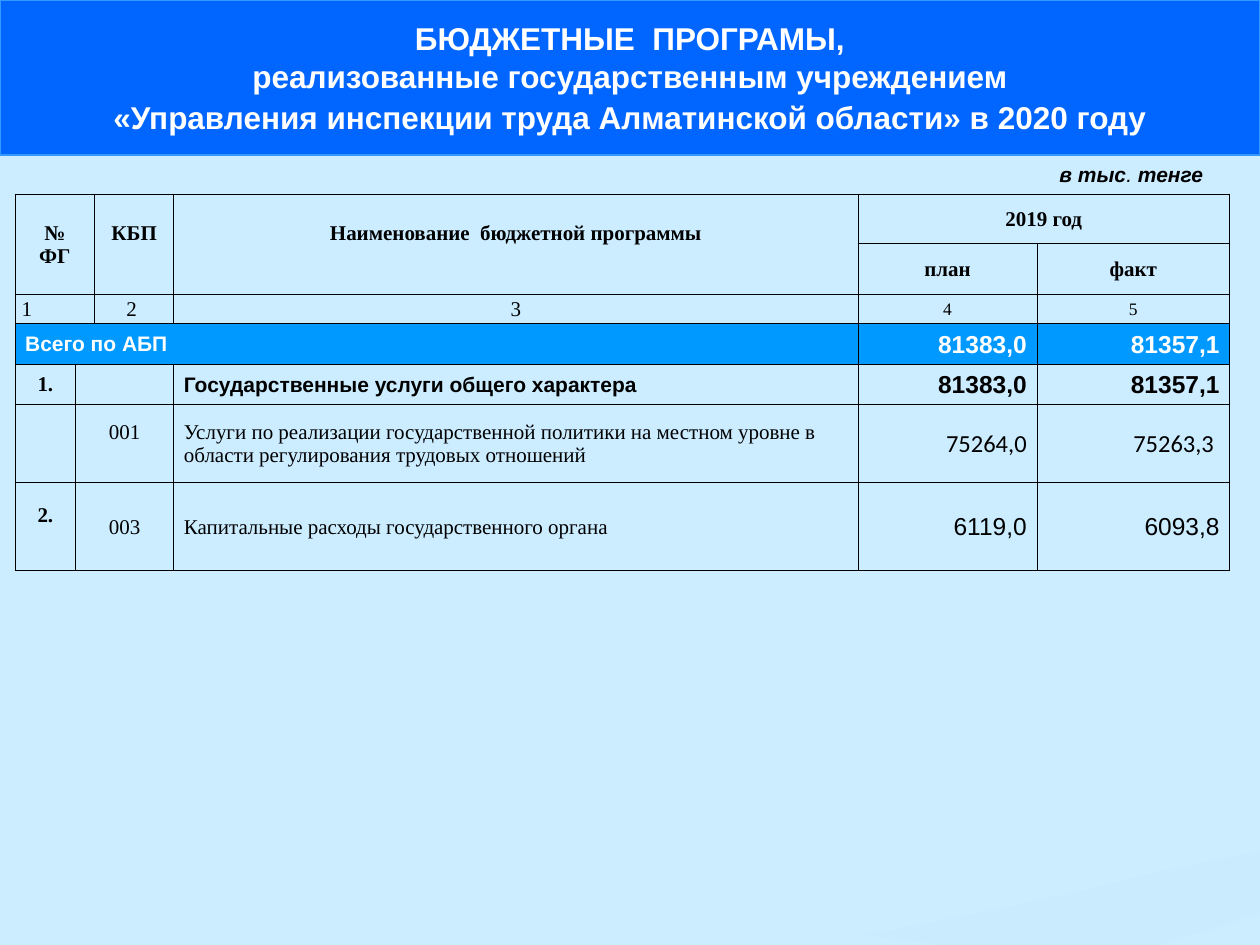
from lxml import etree
from pptx import Presentation, util as u
from pptx.dml.color import RGBColor
from pptx.enum import shapes, text
from pptx.oxml import ns

SKY = RGBColor(0xCC, 0xEC, 0xFF)
SWOOSH = RGBColor(0xC6, 0xE7, 0xFC)
BAND = RGBColor(0x00, 0x66, 0xFF)
EDGE = RGBColor(0x33, 0x99, 0xFF)
TOTAL = RGBColor(0x00, 0x99, 0xFF)
WHITE = RGBColor(0xFF, 0xFF, 0xFF)
BLACK = RGBColor(0, 0, 0)

L, C, R = text.PP_ALIGN.LEFT, text.PP_ALIGN.CENTER, text.PP_ALIGN.RIGHT
MIDDLE = text.MSO_ANCHOR.MIDDLE

HEAD = dict(name="Times New Roman", size=12, bold=True, color=BLACK)
BODY = dict(HEAD, bold=False)
SMALL = dict(BODY, size=10)
GROUP = dict(HEAD, name="Arial")
GROUP_SUM = dict(GROUP, size=14)
TOTAL_NAME = dict(GROUP, color=WHITE)
TOTAL_SUM = dict(GROUP_SUM, color=WHITE)
SUM = dict(GROUP_SUM, bold=False)
CALIBRI_SUM = dict(SUM, name="Calibri")
TITLE = dict(TOTAL_NAME, size=18)
UNIT = dict(GROUP, italic=True)

COLS = [0.48, 0.15, 0.63, 5.43, 1.42, 1.53]
ROWS = [0.39, 0.41, 0.23, 0.32, 0.32, 0.62, 0.7]
NARROW, WIDE, RAISED = 0.01, 0.08, 0.19

# row, column, row span, column span, text, format, alignment, side inset, bottom inset
CELLS = [
    (0, 0, 2, 2, "№\nФГ", HEAD, C, NARROW, 0),
    (0, 2, 2, 1, "КБП", HEAD, C, NARROW, RAISED),
    (0, 3, 2, 1, "Наименование  бюджетной программы", HEAD, C, NARROW, RAISED),
    (0, 4, 1, 2, "2019 год", HEAD, C, NARROW, 0),
    (1, 4, 1, 1, "план", HEAD, C, NARROW, 0),
    (1, 5, 1, 1, "факт", HEAD, C, NARROW, 0),
    (2, 0, 1, 2, "\u00a01", BODY, L, NARROW, 0),
    (2, 2, 1, 1, "2\u00a0", BODY, C, NARROW, 0),
    (2, 3, 1, 1, "3", BODY, C, NARROW, 0),
    (2, 4, 1, 1, "4", SMALL, C, NARROW, 0),
    (2, 5, 1, 1, "5", SMALL, C, NARROW, 0),
    (3, 0, 1, 4, "Всего по АБП", TOTAL_NAME, L, WIDE, 0),
    (3, 4, 1, 1, "81383,0", TOTAL_SUM, R, WIDE, 0),
    (3, 5, 1, 1, "81357,1", TOTAL_SUM, R, WIDE, 0),
    (4, 0, 1, 1, "1.", HEAD, C, NARROW, 0),
    (4, 1, 1, 2, "", BODY, C, NARROW, 0),
    (4, 3, 1, 1, "Государственные услуги общего характера", GROUP, L, WIDE, 0),
    (4, 4, 1, 1, "81383,0", GROUP_SUM, R, WIDE, 0),
    (4, 5, 1, 1, "81357,1", GROUP_SUM, R, WIDE, 0),
    (5, 1, 1, 2, "001", BODY, C, NARROW, RAISED),
    (5, 3, 1, 1, "Услуги по реализации государственной политики на местном уровне "
     "в области регулирования трудовых отношений", BODY, L, WIDE, 0),
    (5, 4, 1, 1, "75264,0", CALIBRI_SUM, R, WIDE, 0),
    (5, 5, 1, 1, "75263,3 ", CALIBRI_SUM, R, WIDE, 0),
    (6, 0, 1, 1, "2.", HEAD, C, NARROW, RAISED),
    (6, 1, 1, 2, "003", BODY, C, NARROW, 0),
    (6, 3, 1, 1, "Капитальные расходы государственного органа", BODY, L, WIDE, 0),
    (6, 4, 1, 1, "6119,0", SUM, R, WIDE, 0),
    (6, 5, 1, 1, "6093,8", SUM, R, WIDE, 0),
]


def inches(box):
    return [u.Inches(v) for v in box]


def add_run(p, words, style):
    r = p.add_run()
    r.text = words
    for key, value in style.items():
        if key == "color":
            r.font.color.rgb = value
        else:
            setattr(r.font, key, u.Pt(value) if key == "size" else value)


def write(tf, words, style, align):
    for i, line in enumerate(words.split("\n")):
        p = tf.paragraphs[0] if i == 0 else tf.add_paragraph()
        p.alignment = align
        if line:
            add_run(p, line, style)


def add_swoosh(s, box):
    x, y, w, h = box
    outline = [(1, 0), (0.91, 0.07), (0.73, 0.23), (0.55, 0.42), (0.29, 0.66),
               (0.07, 0.84), (0, 0.89), (0.1, 0.95), (0.2, 1), (0.75, 1),
               (0.83, 0.89), (0.92, 0.78), (1, 0.65)]
    points = [(u.Inches(x + a * w), u.Inches(y + b * h)) for a, b in outline]
    builder = s.shapes.build_freeform(*points[0])
    builder.add_line_segments(points[1:])
    sp = builder.convert_to_shape()
    sp.shadow.inherit = False
    sp.fill.solid()
    sp.fill.fore_color.rgb = SWOOSH
    sp.line.fill.background()
    color = sp.fill._xPr.find(".//" + ns.qn("a:srgbClr"))
    etree.SubElement(color, ns.qn("a:alpha"), val="30000")


def add_title(s, box):
    sp = s.shapes.add_shape(shapes.MSO_SHAPE.RECTANGLE, *inches(box))
    sp.shadow.inherit = False
    sp.fill.solid()
    sp.fill.fore_color.rgb = BAND
    sp.line.color.rgb = EDGE
    sp.line.width = u.Pt(0.75)
    tf = sp.text_frame
    tf.word_wrap = True
    tf.vertical_anchor = MIDDLE
    write(tf, "БЮДЖЕТНЫЕ  ПРОГРАМЫ,\nреализованные государственным учреждением\n"
          "«Управления инспекции труда Алматинской области» в 2020 году", TITLE, C)
    tf.paragraphs[-1].space_before = u.Pt(2)


def add_unit(s, box):
    tf = s.shapes.add_textbox(*inches(box)).text_frame
    tf.word_wrap = True
    for words, bold in [("в тыс", True), (". ", False), ("тенге", True)]:
        add_run(tf.paragraphs[0], words, dict(UNIT, bold=bold))


def set_borders(cell, widths):
    tc_pr = cell._tc.get_or_add_tcPr()
    for side, width in zip("LRTB", widths):
        ln = etree.SubElement(tc_pr, ns.qn("a:ln" + side), w=str(u.Pt(width)))
        fill = etree.SubElement(ln, ns.qn("a:solidFill"))
        etree.SubElement(fill, ns.qn("a:srgbClr"), val=str(BLACK))


def add_budget_table(s, box):
    table = s.shapes.add_table(len(ROWS), len(COLS), *inches(box)).table
    table.first_row = table.horz_banding = False
    for column, width in zip(table.columns, COLS):
        column.width = u.Inches(width)
    for row, height in zip(table.rows, ROWS):
        row.height = u.Inches(height)
    for i in range(len(ROWS)):
        for j in range(len(COLS)):
            cell = table.cell(i, j)
            left = 1 if i < 3 and j == 2 else 0.5
            right = 1 if i < 3 and j < 2 else 0.5
            set_borders(cell, (left, right, 0.5, 0.5))
            if i == 3:
                cell.fill.solid()
                cell.fill.fore_color.rgb = TOTAL
            else:
                cell.fill.background()
            cell.margin_top, cell.margin_bottom = u.Inches(0.01), 0
    for i, j, down, across, words, style, align, side, bottom in CELLS:
        cell = table.cell(i, j)
        if down * across > 1:
            cell.merge(table.cell(i + down - 1, j + across - 1))
        cell.vertical_anchor = MIDDLE
        cell.margin_left = cell.margin_right = u.Inches(side)
        cell.margin_bottom = u.Inches(bottom)
        write(cell.text_frame, words, style, align)


def main():
    prs = Presentation()
    prs.slide_width, prs.slide_height = inches((10, 7.5))
    s = prs.slides.add_slide(prs.slide_layouts[6])
    s.background.fill.solid()
    s.background.fill.fore_color.rgb = SKY
    add_swoosh(s, (6.85, 6.76, 3.15, 0.74))
    add_budget_table(s, (0.12, 1.54, sum(COLS), sum(ROWS)))
    add_title(s, (0, 0, 10, 1.23))
    add_unit(s, (8.31, 1.23, 1.42, 0.3))
    prs.save("out.pptx")


if __name__ == "__main__":
    main()
